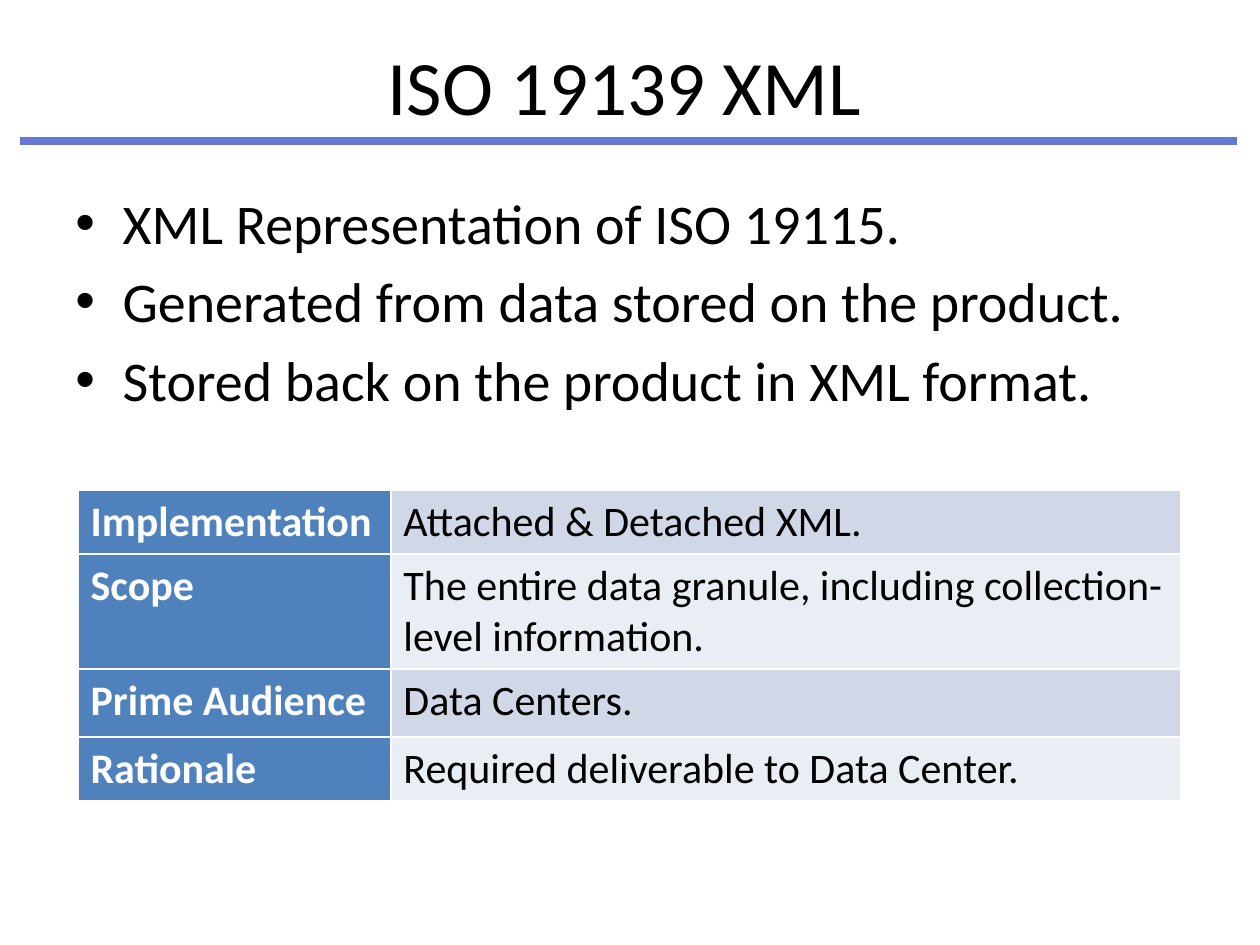
import pptx
import pptx.util
import pptx.dml.color
import pptx.enum.shapes
import pptx.enum.text
import pptx.oxml
import pptx.oxml.ns

Pt = pptx.util.Pt
RGB = pptx.dml.color.RGBColor
BLACK = RGB(0x00, 0x00, 0x00)
WHITE = RGB(0xFF, 0xFF, 0xFF)
RULE = RGB(0x65, 0x78, 0xD4)
HEAD = RGB(0x4F, 0x81, 0xBD)
BANDS = [RGB(0xD0, 0xD8, 0xE8), RGB(0xE9, 0xED, 0xF4)]
POINTS = [
    "XML Representation of ISO 19115.",
    "Generated from data stored on the product.",
    "Stored back on the product in XML format.",
]
ROWS = [
    ("Implementation", "Attached & Detached XML.", 36.5),
    ("Scope", "The entire data granule, including collection-level information.", 65.8),
    ("Prime Audience", "Data Centers.", 38.9),
    ("Rationale", "Required deliverable to Data Center.", 36.5),
]


def node(tag, attrs="", body=""):
    space = pptx.oxml.ns.nsdecls("a")
    return pptx.oxml.parse_xml(f"<a:{tag} {space} {attrs}>{body}</a:{tag}>")


class Painter:
    font = "Calibri"

    def __init__(self, slide):
        self.slide = slide

    def label(self, para, text, size, color=BLACK, bold=False):
        run = para.add_run()
        run.text = text
        run.font.name = self.font
        run.font.size = Pt(size)
        run.font.bold = bold
        run.font.color.rgb = color

    def frame(self, left, top, width, height):
        box = self.slide.shapes.add_textbox(Pt(left), Pt(top), Pt(width), Pt(height))
        box.text_frame.word_wrap = True
        return box.text_frame

    def rule(self, left, right, top):
        kind = pptx.enum.shapes.MSO_CONNECTOR.STRAIGHT
        line = self.slide.shapes.add_connector(kind, Pt(left), Pt(top), Pt(right), Pt(top))
        line.line.color.rgb = RULE
        line.line.width = Pt(4.5)
        line._element.spPr.append(node("effectLst"))

    def title(self, text, *area):
        frame = self.frame(*area)
        frame.vertical_anchor = pptx.enum.text.MSO_ANCHOR.MIDDLE
        para = frame.paragraphs[0]
        para.alignment = pptx.enum.text.PP_ALIGN.CENTER
        self.label(para, text, 44)

    def bullets(self, items, *area):
        frame = self.frame(*area)
        for index, text in enumerate(items):
            para = frame.add_paragraph() if index else frame.paragraphs[0]
            props = para._p.get_or_add_pPr()
            props.set("marL", str(Pt(27)))
            props.set("indent", str(Pt(-27)))
            props.append(node("buFont", 'typeface="Arial"'))
            props.append(node("buChar", 'char="•"'))
            if index:
                para.space_before = Pt(6.4)
            self.label(para, text, 32)

    def cell(self, cell, text, fill, color, bold):
        cell.fill.solid()
        cell.fill.fore_color.rgb = fill
        self.label(cell.text_frame.paragraphs[0], text, 24, color, bold)
        props = cell._tc.get_or_add_tcPr()
        paint = f'<a:solidFill><a:srgbClr val="{WHITE}"/></a:solidFill>'
        for index, side in enumerate(("lnL", "lnR", "lnT", "lnB")):
            props.insert(index, node(side, f'w="{Pt(1)}"', paint))

    def table(self, rows, left, top, widths):
        height = sum(row[2] for row in rows)
        shape = self.slide.shapes.add_table(
            len(rows), len(widths), Pt(left), Pt(top), Pt(sum(widths)), Pt(height))
        table = shape.table
        table.first_row = False
        table.horz_banding = False
        for index, width in enumerate(widths):
            table.columns[index].width = Pt(width)
        for index, (name, text, high) in enumerate(rows):
            table.rows[index].height = Pt(high)
            self.cell(table.cell(index, 0), name, HEAD, WHITE, True)
            self.cell(table.cell(index, 1), text, BANDS[index % 2], BLACK, False)


def main():
    deck = pptx.Presentation()
    deck.slide_width = Pt(720)
    deck.slide_height = Pt(540)
    paint = Painter(deck.slides.add_slide(deck.slide_layouts[6]))
    paint.rule(11.5, 707, 80.5)
    paint.title("ISO 19139 XML", 71, 3.6, 572, 90)
    paint.bullets(POINTS, 36, 104, 648, 145)
    paint.table(ROWS, 44.6, 280, [178.8, 451.6])
    deck.save("out.pptx")


if __name__ == "__main__":
    main()
